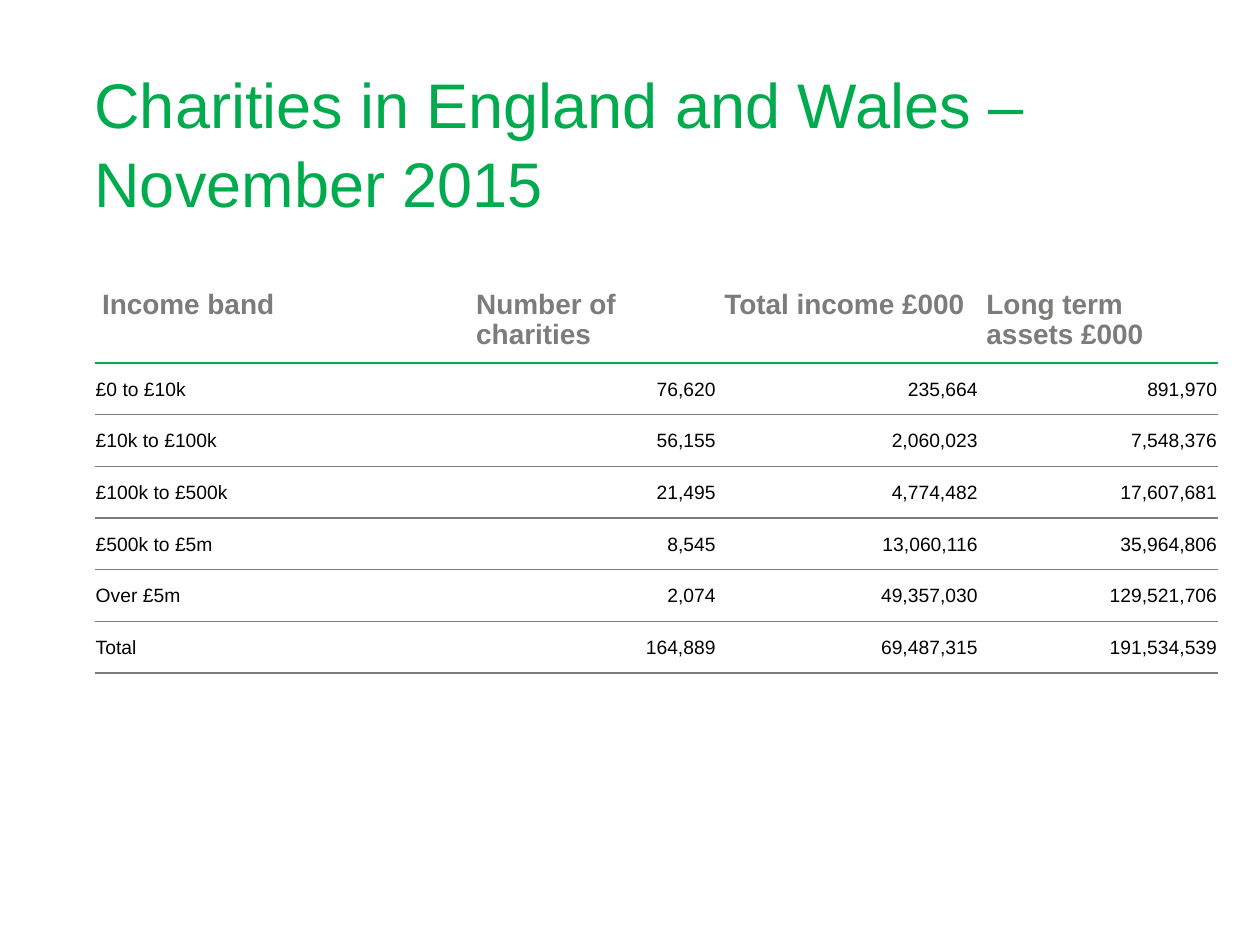
from lxml.etree import SubElement
from pptx import Presentation
from pptx.dml.color import RGBColor
from pptx.enum.text import MSO_ANCHOR, PP_ALIGN
from pptx.oxml.ns import qn
from pptx.util import Inches, Pt

TITLE = "Charities in England and Wales – November 2015"
HEADINGS = ["Income band", "Number of charities", "Total income £000", "Long term assets £000"]
BANDS = [
    ["£0 to £10k", "76,620", "235,664", "891,970"],
    ["£10k to £100k", "56,155", "2,060,023", "7,548,376"],
    ["£100k to £500k", "21,495", "4,774,482", "17,607,681"],
    ["£500k to £5m", "8,545", "13,060,116", "35,964,806"],
    ["Over £5m", "2,074", "49,357,030", "129,521,706"],
    ["Total", "164,889", "69,487,315", "191,534,539"],
]
COLUMN_WIDTHS = [2.97, 1.97, 2.08, 1.9]
HEADING_HEIGHT, BAND_HEIGHT = 0.61, 0.41
LEFT, WIDTH = 0.75, 8.92
GREEN, GREY, BLACK = "00AB4E", "7C7C7B", "000000"

TITLE_FONT = {"name": "Arial", "size": Pt(36), "bold": False}
HEADING_FONT = {"name": "Arial", "size": Pt(16), "bold": True}
BAND_FONT = {"name": "Arial", "size": Pt(11), "bold": False}
TITLE_FRAME = dict.fromkeys(["margin_left", "margin_top", "margin_right", "margin_bottom"], 0)
TITLE_FRAME |= {"word_wrap": True, "vertical_anchor": MSO_ANCHOR.MIDDLE}
HEADING_CELL = dict.fromkeys(["margin_left", "margin_top", "margin_right", "margin_bottom"], Inches(0.06))
HEADING_CELL |= {"vertical_anchor": MSO_ANCHOR.TOP}
BAND_CELL = dict.fromkeys(["margin_left", "margin_top", "margin_right"], Inches(0.01))
BAND_CELL |= {"margin_bottom": 0, "vertical_anchor": MSO_ANCHOR.MIDDLE}


def apply(target, values):
    for name, value in values.items():
        setattr(target, name, value)


def colour(hex_value):
    return RGBColor.from_string(hex_value)


def write(paragraph, words, font, hex_value, align=PP_ALIGN.LEFT, spacing=1.0):
    apply(paragraph, {"text": words, "alignment": align, "line_spacing": spacing})
    apply(paragraph.runs[0].font, font)
    paragraph.runs[0].font.color.rgb = colour(hex_value)


def rule_cell(cell, above, below):
    properties = cell._tc.get_or_add_tcPr()
    for side, rule in {"lnL": None, "lnR": None, "lnT": above, "lnB": below}.items():
        if rule is None:
            SubElement(SubElement(properties, qn(f"a:{side}"), w="0"), qn("a:noFill"))
        else:
            hex_value, points = rule
            line = SubElement(properties, qn(f"a:{side}"), w=str(Pt(points)))
            SubElement(SubElement(line, qn("a:solidFill")), qn("a:srgbClr"), val=hex_value)
    cell.fill.background()


def add_title(slide):
    frame = slide.shapes.add_textbox(Inches(LEFT), Inches(0.31), Inches(WIDTH), Inches(1.62)).text_frame
    apply(frame, TITLE_FRAME)
    write(frame.paragraphs[0], TITLE, TITLE_FONT, GREEN, spacing=1.05)


def add_bands(slide):
    rows = [HEADINGS, *BANDS]
    heights = [HEADING_HEIGHT] + [BAND_HEIGHT] * len(BANDS)
    rules = [None, (GREEN, 1.5)] + [(GREY, 0.75)] * len(BANDS)
    table = slide.shapes.add_table(
        len(rows), len(HEADINGS), Inches(LEFT), Inches(2.25), Inches(WIDTH), Inches(sum(heights))
    ).table
    apply(table, {"first_row": False, "horz_banding": False})
    for column, width in zip(table.columns, COLUMN_WIDTHS):
        column.width = Inches(width)
    for r, (row, height) in enumerate(zip(rows, heights)):
        table.rows[r].height = Inches(height)
        for c, words in enumerate(row):
            cell = table.cell(r, c)
            paragraph = cell.text_frame.paragraphs[0]
            if r == 0:
                apply(cell, HEADING_CELL)
                write(paragraph, words, HEADING_FONT, GREY, spacing=0.96)
            else:
                apply(cell, BAND_CELL)
                write(paragraph, words, BAND_FONT, BLACK, PP_ALIGN.RIGHT if c else PP_ALIGN.LEFT)
            rule_cell(cell, rules[r], rules[r + 1])


def main():
    """Build the slide of charities by income band."""
    deck = Presentation()
    apply(deck, {"slide_width": Inches(10), "slide_height": Inches(7.5)})
    slide = deck.slides.add_slide(deck.slide_layouts[6])
    add_title(slide)
    add_bands(slide)
    deck.save("out.pptx")


if __name__ == "__main__":
    main()
